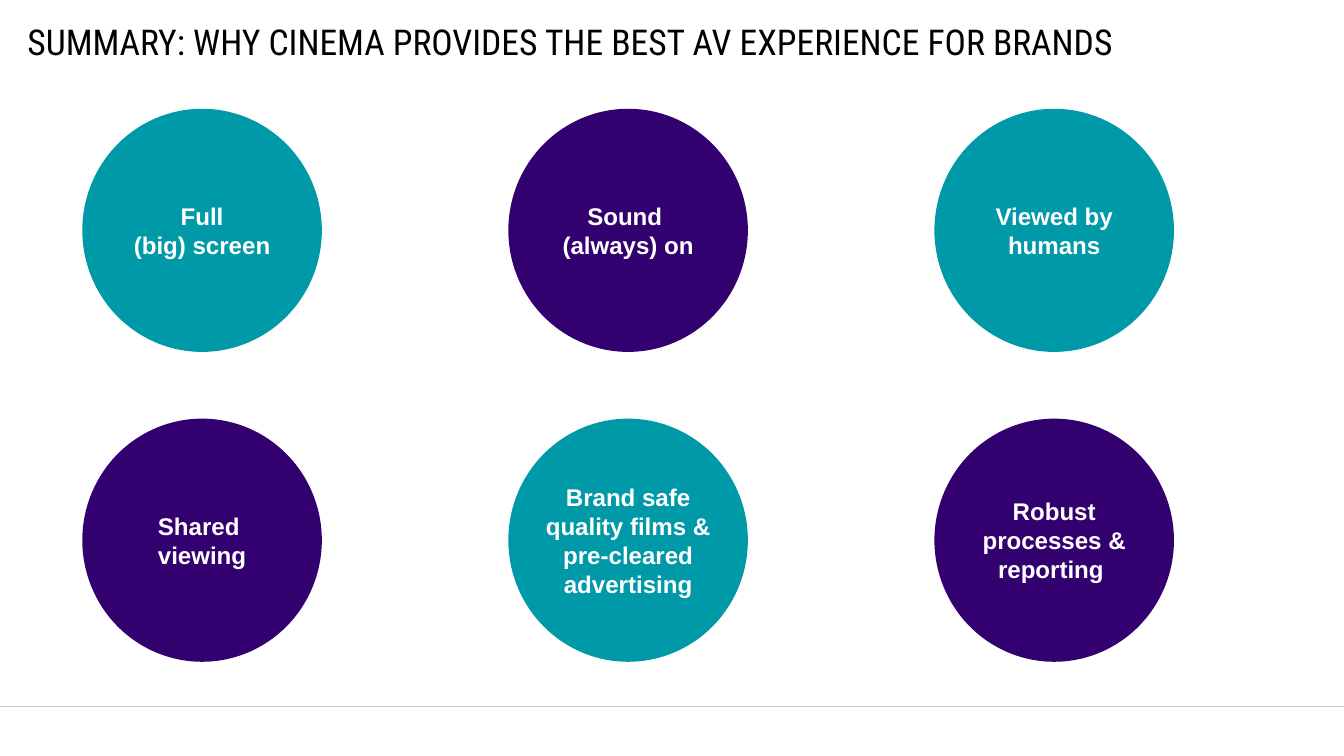
from dataclasses import dataclass

import pptx
import pptx.dml.color
import pptx.enum.shapes
import pptx.enum.text
import pptx.oxml.ns
import pptx.util
from lxml import etree


@dataclass(frozen=True)
class Theme:
    teal: str = "0099A8"
    purple: str = "33006F"
    white: str = "FFFFFF"
    black: str = "000000"
    rule: str = "CAC8C8"
    title_font: str = "Roboto Condensed"
    body_font: str = "Arial"
    title_size: float = 28
    body_size: float = 19
    rule_width: float = 0.5


THEME = Theme()
WIDTH, HEIGHT = 14.7, 8.27

# Grid of circles: origin, pitch and size in inches
LEFT, TOP = 0.9, 1.19
COLUMN, ROW = 4.66, 3.39
CIRCLE_W, CIRCLE_H = 2.62, 2.66

TITLE = "SUMMARY: WHY CINEMA PROVIDES THE BEST AV EXPERIENCE FOR BRANDS"
REASONS = [
    [["Full", "(big) screen"], ["Sound ", "(always) on"], ["Viewed by humans"]],
    [
        ["Shared ", "viewing"],
        ["Brand safe quality films & ", "pre-cleared advertising"],
        ["Robust processes & reporting "],
    ],
]


def inches(*lengths):
    return [pptx.util.Inches(n) for n in lengths]


def rgb(value):
    return pptx.dml.color.RGBColor.from_string(value)


def write(sp, lines, font, size, color, align, bold=False):
    tf = sp.text_frame
    tf.word_wrap = True
    tf.vertical_anchor = pptx.enum.text.MSO_ANCHOR.MIDDLE
    tf.margin_left = tf.margin_top = tf.margin_right = tf.margin_bottom = 0
    for i, line in enumerate(lines):
        p = tf.paragraphs[0] if i == 0 else tf.add_paragraph()
        p.alignment = align
        r = p.add_run()
        r.text = line
        r.font.name = font
        r.font.size = pptx.util.Pt(size)
        r.font.bold = bold
        r.font.color.rgb = rgb(color)


def add_title(slide, text):
    sp = slide.shapes.add_textbox(*inches(0.3, 0.3, 13.58, 0.31))
    write(sp, [text], THEME.title_font, THEME.title_size, THEME.black,
          pptx.enum.text.PP_ALIGN.LEFT)


def add_footer_rule(slide, y):
    line = slide.shapes.add_connector(
        pptx.enum.shapes.MSO_CONNECTOR.STRAIGHT, *inches(0, y, WIDTH, y))
    line.line.color.rgb = rgb(THEME.rule)
    line.line.width = pptx.util.Pt(THEME.rule_width)
    etree.SubElement(line._element.spPr, pptx.oxml.ns.qn("a:effectLst"))


def add_circle(slide, column, row, lines):
    sp = slide.shapes.add_shape(
        pptx.enum.shapes.MSO_SHAPE.OVAL,
        *inches(LEFT + column * COLUMN, TOP + row * ROW, CIRCLE_W, CIRCLE_H))
    sp.shadow.inherit = False
    sp.fill.solid()
    sp.fill.fore_color.rgb = rgb((THEME.teal, THEME.purple)[(column + row) % 2])
    sp.line.fill.background()
    write(sp, lines, THEME.body_font, THEME.body_size, THEME.white,
          pptx.enum.text.PP_ALIGN.CENTER, bold=True)


def main():
    prs = pptx.Presentation()
    prs.slide_width, prs.slide_height = inches(WIDTH, HEIGHT)
    slide = prs.slides.add_slide(prs.slide_layouts[6])

    # Frame: footer rule and title
    add_footer_rule(slide, 7.73)
    add_title(slide, TITLE)

    # Reasons, in alternating colours
    for row, reasons in enumerate(REASONS):
        for column, lines in enumerate(reasons):
            add_circle(slide, column, row, lines)

    prs.save("out.pptx")


if __name__ == "__main__":
    main()
